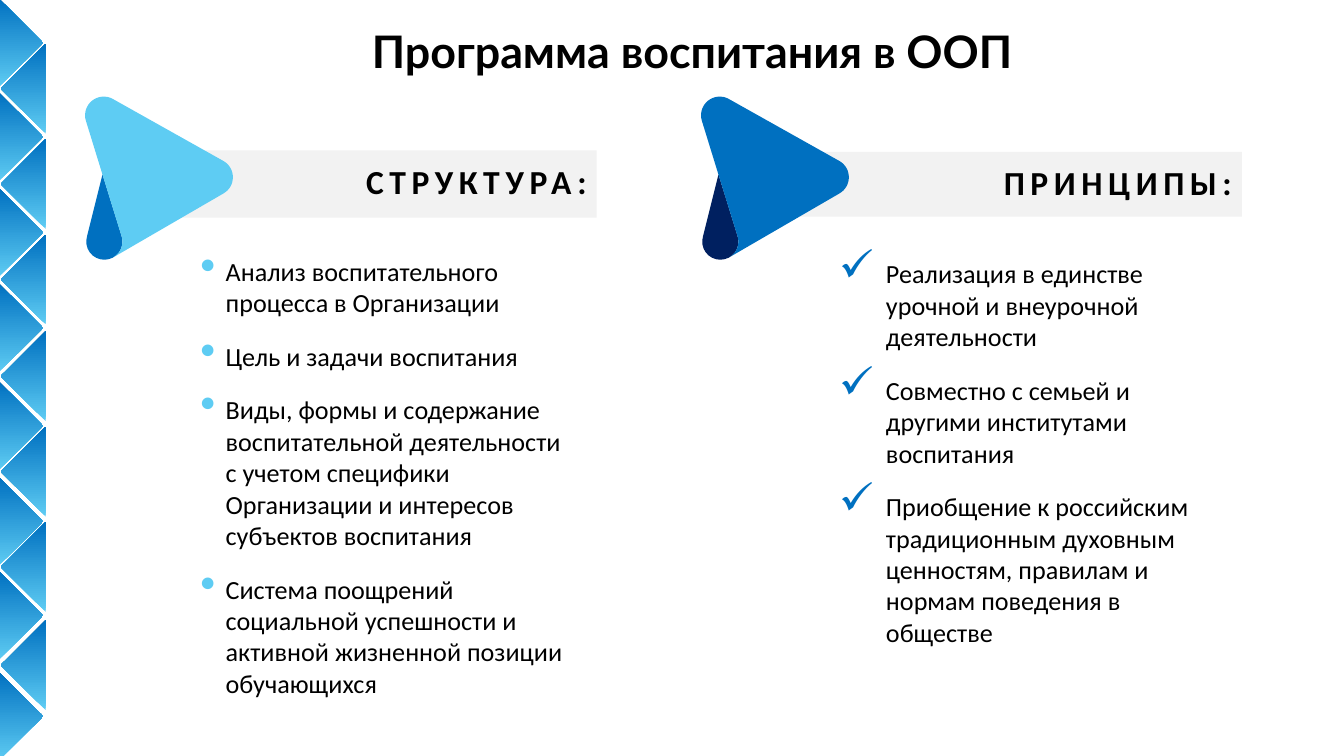
from math import cos, radians, sin

from lxml import etree
from pptx import Presentation
from pptx.dml.color import RGBColor
from pptx.enum.shapes import MSO_SHAPE
from pptx.enum.text import MSO_ANCHOR, PP_ALIGN
from pptx.oxml.ns import qn
from pptx.util import Pt

RECTANGLE = MSO_SHAPE.RECTANGLE
TOP, MIDDLE = MSO_ANCHOR.TOP, MSO_ANCHOR.MIDDLE
LEFT, CENTER, RIGHT = PP_ALIGN.LEFT, PP_ALIGN.CENTER, PP_ALIGN.RIGHT

BLACK = RGBColor(0, 0, 0)
GRAY = RGBColor(0xF2, 0xF2, 0xF2)
SKY = RGBColor(0x5E, 0xCC, 0xF3)
BLUE = RGBColor(0x00, 0x70, 0xC0)
NAVY = RGBColor(0x00, 0x20, 0x60)

RIGHT_TIPS = [23, 73.4, 124.6, 175.7, 228.2, 279.4, 329.8, 383.8]
LEFT_TIPS = [47.5, 98.6, 149.8, 201.6, 252.7, 303.8, 356.4]
HALF_SIDE = 24.1

STRUCTURE = [
    "Анализ воспитательного процесса в Организации",
    "Цель и задачи воспитания",
    "Виды, формы и содержание воспитательной деятельности с учетом "
    "специфики Организации и интересов субъектов воспитания",
    "Система поощрений социальной успешности и активной жизненной "
    "позиции обучающихся",
]
PRINCIPLES = [
    "Реализация в единстве урочной и внеурочной деятельности",
    "Совместно с семьей и другими институтами воспитания",
    "Приобщение к российским традиционным духовным ценностям, "
    "правилам и нормам поведения в обществе",
]


def arc(x, y, radius, start, end, steps=16):
    angles = [radians(start + (end - start) * i / steps) for i in range(steps + 1)]
    return [(x + radius * cos(a), y + radius * sin(a)) for a in angles]


def assign(target, values):
    for name, value in values.items():
        setattr(target, name, value)


class SlideBuilder:
    title_font = {"name": "Lato", "size": Pt(24), "bold": True}
    heading_font = {"name": "Calibri", "size": Pt(18), "bold": True}
    body_font = {"name": "Calibri", "size": Pt(14), "bold": False}
    heading_para = {"alignment": RIGHT, "line_spacing": 0.9, "space_before": Pt(7.5)}
    frame = {
        "word_wrap": True,
        "margin_left": Pt(5.25), "margin_right": Pt(5.25),
        "margin_top": Pt(2.65), "margin_bottom": Pt(2.65),
    }

    def __init__(self, slide):
        self.shapes = slide.shapes

    def fill_text(self, box, lines, font, para_format, anchor):
        text_frame = box.text_frame
        assign(text_frame, self.frame)
        text_frame.vertical_anchor = anchor
        for number, line in enumerate(lines):
            para = text_frame.add_paragraph() if number else text_frame.paragraphs[0]
            assign(para, para_format)
            span = para.add_run()
            span.text = line
            assign(span.font, font)
            span.font.color.rgb = BLACK
        return text_frame.paragraphs

    def title(self, bounds, text):
        box = self.shapes.add_textbox(*map(Pt, bounds))
        self.fill_text(box, [text], self.title_font,
                       {"alignment": CENTER, "line_spacing": 0.9}, MIDDLE)

    def heading(self, bounds, text):
        box = self.shapes.add_shape(RECTANGLE, *map(Pt, bounds))
        box.shadow.inherit = False
        box.fill.solid()
        box.fill.fore_color.rgb = GRAY
        box.line.fill.background()
        paras = self.fill_text(box, [text], self.heading_font, self.heading_para, MIDDLE)
        paras[0].runs[0]._r.get_or_add_rPr().set("spc", "300")

    def bullets(self, bounds, lines, symbol, color, indent):
        box = self.shapes.add_textbox(*map(Pt, bounds))
        para_format = {"alignment": LEFT, "space_before": Pt(12)}
        for para in self.fill_text(box, lines, self.body_font, para_format, TOP):
            props = para._p.get_or_add_pPr()
            props.set("marL", str(Pt(indent)))
            props.set("indent", str(-Pt(indent)))
            tint = etree.SubElement(props, qn("a:buClr"))
            etree.SubElement(tint, qn("a:srgbClr"), val=str(color))
            etree.SubElement(props, qn("a:buSzPct"), val="170000")
            etree.SubElement(props, qn("a:buChar"), char=symbol)

    def outline(self, points):
        first, *rest = [(Pt(x), Pt(y)) for x, y in points]
        builder = self.shapes.build_freeform(*first)
        builder.add_line_segments(rest, close=True)
        shape = builder.convert_to_shape()
        shape.shadow.inherit = False
        shape.line.fill.background()
        return shape

    def triangle(self, tip_x, base_x, middle):
        shape = self.outline([(tip_x, middle), (base_x, middle - HALF_SIDE),
                              (base_x, middle + HALF_SIDE)])
        shape.fill.gradient()
        shape.fill.gradient_angle = 90
        for stop, color in zip(shape.fill.gradient_stops, (SKY, BLUE)):
            stop.color.rgb = color

    def arrow(self, left, top, color, fold_color):
        notch = [(9.4, 41.8)]
        fold = notch + arc(10.4, 77.8, 9.7, -17, 197)
        body = (arc(10.1, 10.1, 10, 163, 300) + arc(69.3, 43.3, 10, -60, 60)
                + arc(10.4, 77.8, 9.7, 60, -17) + notch)
        for points, fill_color in ((fold, fold_color), (body, color)):
            shape = self.outline([(left + x, top + y) for x, y in points])
            shape.fill.solid()
            shape.fill.fore_color.rgb = fill_color


def main():
    deck = Presentation()
    deck.slide_width, deck.slide_height = Pt(720), Pt(405)
    page = SlideBuilder(deck.slides.add_slide(deck.slide_layouts[6]))

    for middle in RIGHT_TIPS:
        page.triangle(23.2, -1, middle)
    for middle in LEFT_TIPS:
        page.triangle(0.3, 24.5, middle)

    page.heading((72.7, 80.6, 247, 36), "СТРУКТУРА:")
    page.heading((414, 81.4, 251.3, 34.6), "ПРИНЦИПЫ:")
    page.title((60.5, -1.4, 620.6, 60.5), "Программа воспитания в ООП")
    page.bullets((102.2, 133.9, 208.8, 272.2), STRUCTURE, "•", SKY, 13.5)
    page.bullets((444.2, 135.4, 214.6, 277.2), PRINCIPLES, "✓", BLUE, 25.2)
    page.arrow(45.5, 51.7, SKY, BLUE)
    page.arrow(375.5, 51.7, BLUE, NAVY)

    deck.save("out.pptx")


if __name__ == "__main__":
    main()
